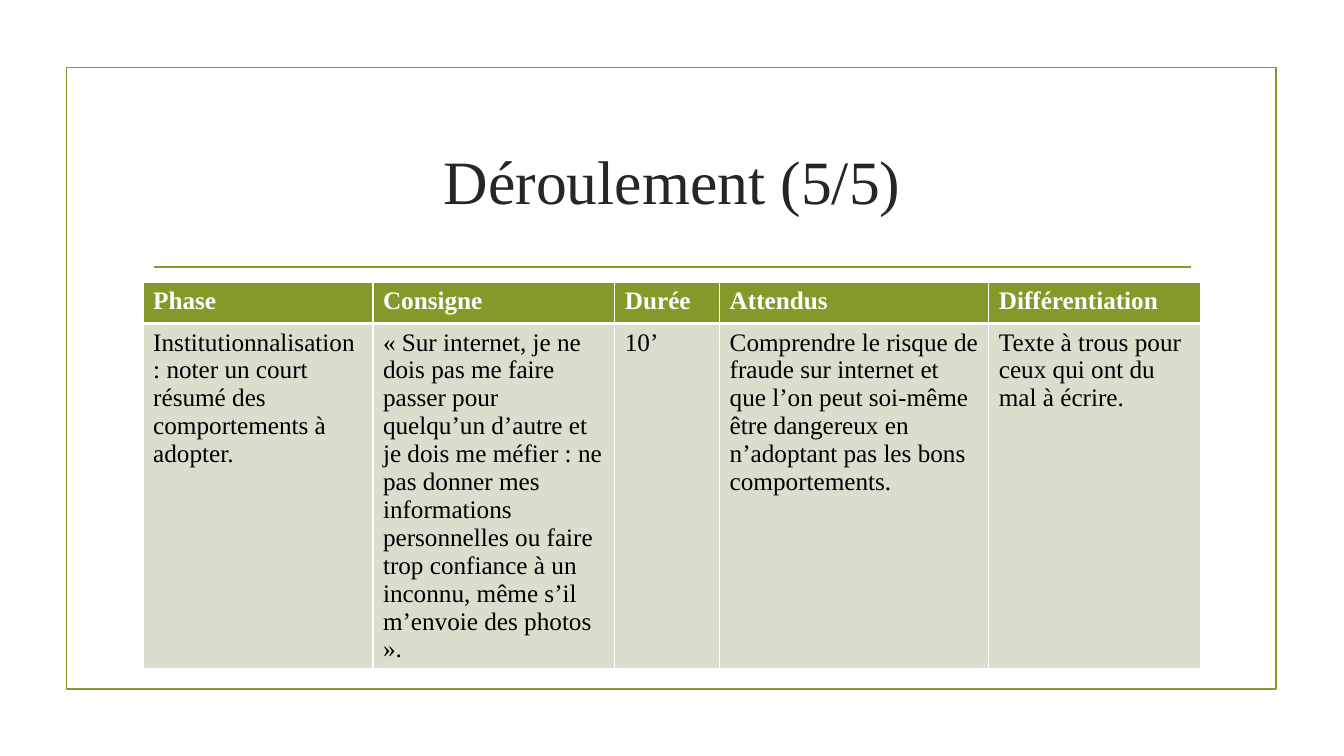
from dataclasses import dataclass

from lxml.etree import SubElement
from pptx import Presentation
from pptx.dml.color import RGBColor
from pptx.enum.shapes import MSO_CONNECTOR, MSO_SHAPE
from pptx.enum.text import MSO_ANCHOR, MSO_AUTO_SIZE, PP_ALIGN
from pptx.oxml.ns import qn
from pptx.util import Inches, Pt


@dataclass(frozen=True)
class Theme:
    font: str = "Times New Roman"
    olive: str = "83992A"
    pale: str = "D9DECD"
    white: str = "FFFFFF"
    black: str = "000000"
    ink: str = "262626"
    title_size: int = 44
    table_size: int = 18
    line_width: float = 1.25
    cell_border: int = 1
    header_border: int = 3


THEME = Theme()
SLIDE_WIDTH, SLIDE_HEIGHT = Inches(13.33), Inches(7.5)
CONTENT_LEFT, CONTENT_WIDTH = 10.65, 78.77
COLUMN_SHARES = [17.1, 18, 7.8, 20.03, 15.75]
ROW_SHARES = [5.47, 45.33]
PHASES = [
    ["Phase", "Consigne", "Durée", "Attendus", "Différentiation"],
    [
        "Institutionnalisation : noter un court résumé des comportements à adopter.",
        "« Sur internet, je ne dois pas me faire passer pour quelqu’un d’autre et "
        "je dois me méfier : ne pas donner mes informations personnelles ou faire "
        "trop confiance à un inconnu, même s’il m’envoie des photos ».",
        "10’",
        "Comprendre le risque de fraude sur internet et que l’on peut soi-même "
        "être dangereux en n’adoptant pas les bons comportements.",
        "Texte à trous pour ceux qui ont du mal à écrire.",
    ],
]


def across(percent):
    return round(SLIDE_WIDTH * percent / 100)


def down(percent):
    return round(SLIDE_HEIGHT * percent / 100)


def area(left, top, width, height):
    return across(left), down(top), across(width), down(height)


def rgb(color):
    return RGBColor.from_string(color)


def write(frame, text, *, size, color, bold=False, align=PP_ALIGN.LEFT):
    frame.word_wrap = True
    paragraph = frame.paragraphs[0]
    paragraph.alignment = align
    run = paragraph.add_run()
    run.text = text
    run.font.name = THEME.font
    run.font.size = Pt(size)
    run.font.bold = bold
    run.font.color.rgb = rgb(color)


def style_line(line):
    line.color.rgb = rgb(THEME.olive)
    line.width = Pt(THEME.line_width)


def add_frame(slide):
    frame = slide.shapes.add_shape(MSO_SHAPE.RECTANGLE, *area(4.95, 8.93, 90.02, 82.27))
    frame.shadow.inherit = False
    frame.fill.background()
    style_line(frame.line)


def add_rule(slide):
    height = down(35.33)
    rule = slide.shapes.add_connector(
        MSO_CONNECTOR.STRAIGHT, across(11.48), height, across(88.6), height
    )
    style_line(rule.line)
    SubElement(rule._element.spPr, qn("a:effectLst"))


def set_title(slide, text):
    title = slide.shapes.title
    title.left, title.top, title.width, title.height = area(
        CONTENT_LEFT, 14.27, CONTENT_WIDTH, 19.07
    )
    title.text_frame.auto_size = MSO_AUTO_SIZE.NONE
    title.text_frame.vertical_anchor = MSO_ANCHOR.MIDDLE
    write(title.text_frame, text, size=THEME.title_size, color=THEME.ink,
          align=PP_ALIGN.CENTER)


def add_borders(cell, widths):
    properties = cell._tc.get_or_add_tcPr()
    for side, width in widths.items():
        border = SubElement(properties, qn(f"a:ln{side}"), w=str(Pt(width)))
        fill = SubElement(border, qn("a:solidFill"))
        SubElement(fill, qn("a:srgbClr"), val=THEME.white)


def fill_cell(cell, text, is_header):
    thin, thick = THEME.cell_border, THEME.header_border
    top, bottom = (thin, thick) if is_header else (thick, thin)
    add_borders(cell, {"L": thin, "R": thin, "T": top, "B": bottom})
    cell.fill.solid()
    cell.fill.fore_color.rgb = rgb(THEME.olive if is_header else THEME.pale)
    write(cell.text_frame, text, size=THEME.table_size, bold=is_header,
          color=THEME.white if is_header else THEME.black)


def add_phase_table(slide):
    bounds = area(CONTENT_LEFT, 37.33, sum(COLUMN_SHARES), sum(ROW_SHARES))
    table = slide.shapes.add_table(len(PHASES), len(PHASES[0]), *bounds).table
    for column, share in zip(table.columns, COLUMN_SHARES):
        column.width = across(share)
    for row, share in zip(table.rows, ROW_SHARES):
        row.height = down(share)
    for row_index, phase in enumerate(PHASES):
        for column_index, text in enumerate(phase):
            fill_cell(table.cell(row_index, column_index), text, row_index == 0)


def main():
    presentation = Presentation()
    presentation.slide_width = SLIDE_WIDTH
    presentation.slide_height = SLIDE_HEIGHT
    title_only = presentation.slide_layouts.get_by_name("Title Only")
    slide = presentation.slides.add_slide(title_only)
    add_frame(slide)
    add_rule(slide)
    set_title(slide, "Déroulement (5/5)")
    add_phase_table(slide)
    presentation.save("out.pptx")


if __name__ == "__main__":
    main()
